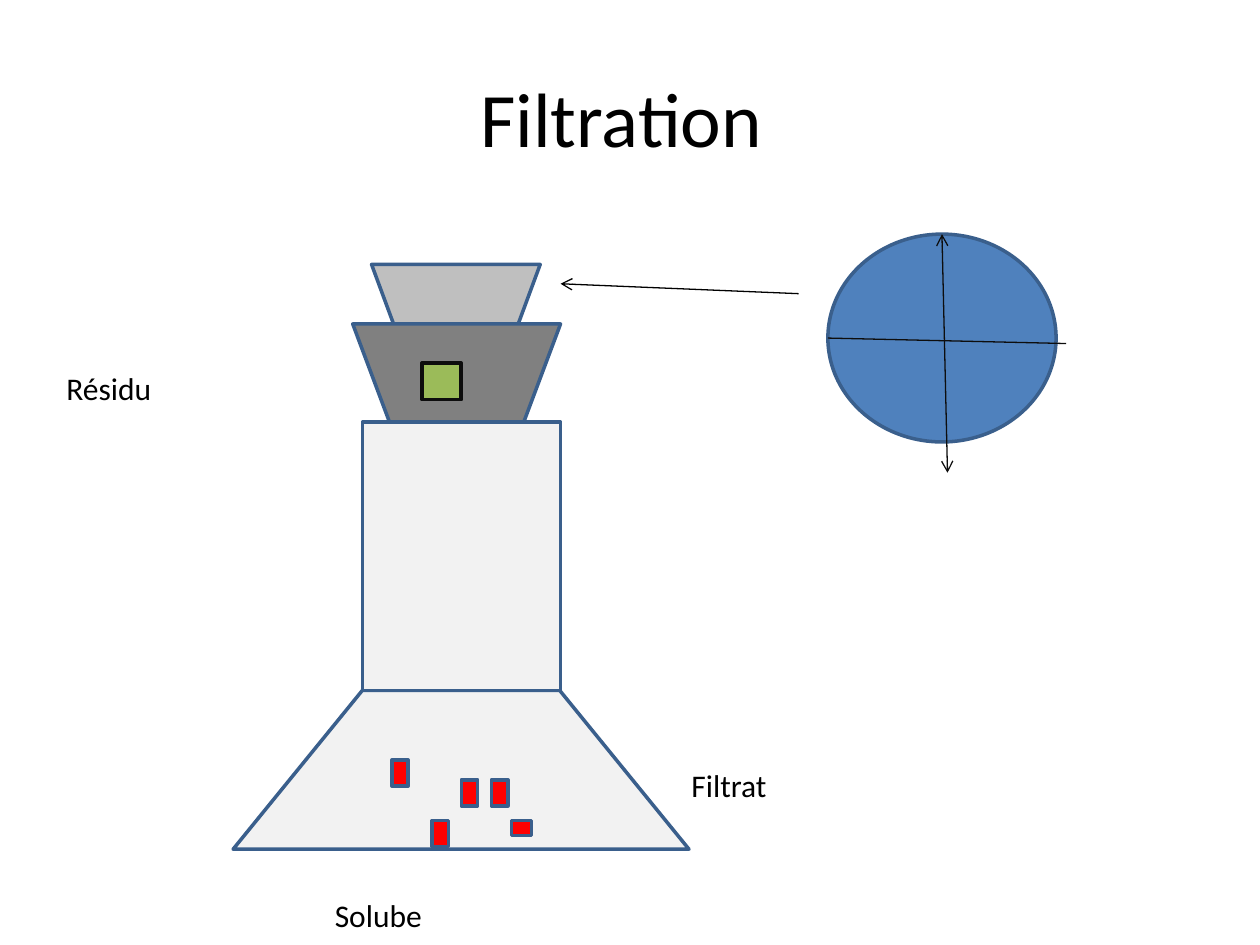
from lxml import etree
from pptx import Presentation
from pptx.dml.color import RGBColor
from pptx.enum.shapes import MSO_CONNECTOR, MSO_SHAPE
from pptx.enum.text import MSO_ANCHOR, MSO_AUTO_SIZE, PP_ALIGN
from pptx.oxml.ns import qn
from pptx.util import Cm, Pt

TRIANGLE = MSO_SHAPE.ISOSCELES_TRIANGLE
TRAPEZOID = MSO_SHAPE.TRAPEZOID
PROCESS = MSO_SHAPE.FLOWCHART_PROCESS
RECTANGLE = MSO_SHAPE.RECTANGLE
OVAL = MSO_SHAPE.OVAL
STRAIGHT = MSO_CONNECTOR.STRAIGHT
MIDDLE = MSO_ANCHOR.MIDDLE
GROW = MSO_AUTO_SIZE.SHAPE_TO_FIT_TEXT
LEFT, CENTER = PP_ALIGN.LEFT, PP_ALIGN.CENTER

BLUE_EDGE = "3A5F8C"
NEAR_BLACK = "0D0D0D"
GLASS = "F2F2F2"
TOP_SITE = 0


def color(value):
    return RGBColor.from_string(value)


def write_text(frame, text, size=18, font="Calibri", fill="000000", align=LEFT):
    frame.word_wrap = True
    paragraph = frame.paragraphs[0]
    paragraph.alignment = align
    run = paragraph.add_run()
    run.text = text
    run.font.size = Pt(size)
    run.font.name = font
    run.font.color.rgb = color(fill)


def add_label(slide, text, left, top, width):
    text_box = slide.shapes.add_textbox(Cm(left), Cm(top), Cm(width), Cm(1.02))
    write_text(text_box.text_frame, text)
    text_box.text_frame.auto_size = GROW


def add_part(slide, kind, box, fill, edge=BLUE_EDGE, rotation=0):
    shape = slide.shapes.add_shape(kind, *[Cm(length) for length in box])
    shape.shadow.inherit = False
    shape.fill.solid()
    shape.fill.fore_color.rgb = color(fill)
    shape.line.color.rgb = color(edge)
    shape.line.width = Pt(2)
    shape.rotation = rotation
    return shape


def add_line(slide, start, end, stroke, arrows=()):
    connector = slide.shapes.add_connector(
        STRAIGHT, *[Cm(length) for length in start + end])
    connector.line.color.rgb = color(stroke)
    connector.line.width = Pt(0.75)
    properties = connector.element.spPr
    outline = properties.find(qn("a:ln"))
    for arrow in arrows:
        etree.SubElement(outline, qn(f"a:{arrow}"), type="arrow")
    etree.SubElement(properties, qn("a:effectLst"))
    return connector


def place_title(slide, left, top, width, height):
    title = slide.shapes.title
    title.left, title.top = Cm(left), Cm(top)
    title.width, title.height = Cm(width), Cm(height)
    title.text_frame.vertical_anchor = MIDDLE
    write_text(title.text_frame, "Filtration ", size=44, align=CENTER)


def draw_flask(slide, left, top):
    def part(kind, x, y, width, height, fill, **options):
        return add_part(slide, kind, (left + x, top + y, width, height), fill, **options)

    part(TRIANGLE, 2.79, 0, 3.4, 4.6, "BFBFBF", rotation=180)
    part(TRIANGLE, 2.41, 1.2, 4.19, 5.59, "808080", rotation=180)
    base = part(TRAPEZOID, 0, 8.59, 9.19, 3.2, GLASS)
    base.adjustments[0] = 0.814
    part(PROCESS, 1.9, 3.89, 5.41, 3.99, GLASS, rotation=90)
    part(RECTANGLE, 3.81, 1.99, 0.79, 0.74, "9BBB59", edge=NEAR_BLACK)

    grain = (0.33, 0.53)
    flat_grain = (0.41, 0.3)
    for x, y, size in [(3.2, 9.99, grain), (4.6, 10.39, grain), (4.01, 11.21, grain),
                       (5.21, 10.39, grain), (5.61, 11.21, flat_grain)]:
        part(RECTANGLE, x, y, *size, "FF0000")

    add_label(slide, "Filtrat", left + 8.99, top + 9.99, 6)
    add_label(slide, "Résidu", left - 3.61, top + 1.99, 6)
    add_label(slide, "Solube", left + 1.8, top + 12.6, 10.2)


def draw_filter_paper(slide, left, top, width, height):
    disc = add_part(slide, OVAL, (left, top, width, height), "4F81BD")
    center = left + width / 2
    vertical_fold = add_line(slide, (center, top), (center + 0.11, top + 4.81),
                             NEAR_BLACK, arrows=("headEnd", "tailEnd"))
    vertical_fold.begin_connect(disc, TOP_SITE)
    middle = top + height / 2
    add_line(slide, (left, middle), (left + 4.8, middle + 0.11), NEAR_BLACK)
    add_line(slide, (left - 0.59, top + 1.2), (left - 5.39, top + 1), "000000",
             arrows=("tailEnd",))


def main():
    presentation = Presentation()
    presentation.slide_width = Cm(25.4)
    presentation.slide_height = Cm(19.05)
    slide = presentation.slides.add_slide(presentation.slide_layouts[5])
    place_title(slide, 1.27, 0.76, 22.86, 3.18)
    draw_flask(slide, 4.7, 5.33)
    draw_filter_paper(slide, 16.69, 4.72, 4.6, 4.19)
    presentation.save("out.pptx")


if __name__ == "__main__":
    main()
